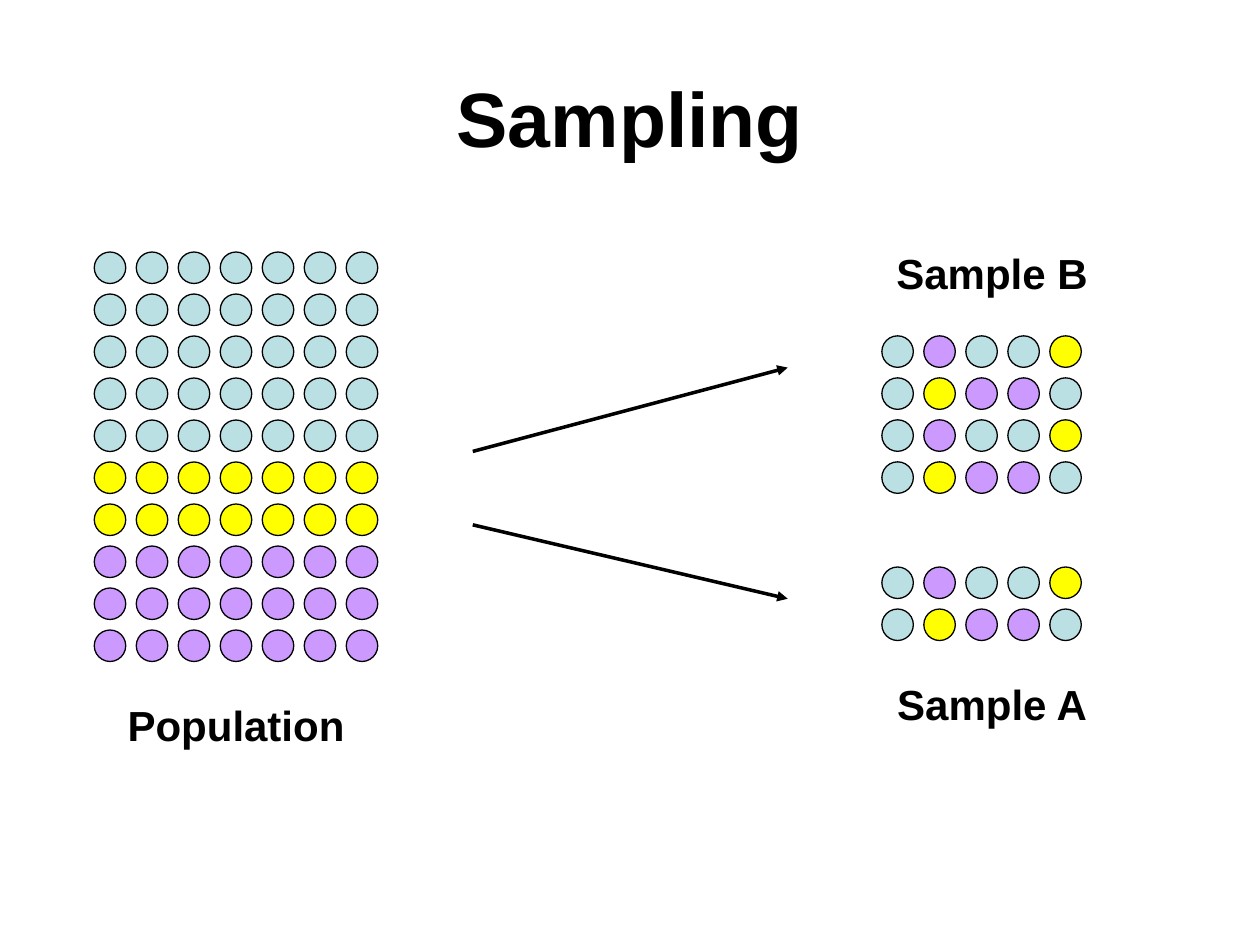
from lxml.etree import SubElement
from pptx import Presentation
from pptx.dml.color import RGBColor
from pptx.enum.shapes import MSO_CONNECTOR, MSO_SHAPE
from pptx.enum.text import MSO_ANCHOR, MSO_AUTO_SIZE, PP_ALIGN
from pptx.oxml.ns import qn
from pptx.util import Cm, Pt

COLORS = {"black": "000000", "blue": "BBE0E3", "yellow": "FFFF00", "purple": "CC99FF"}
DOT_COLORS = {"b": "blue", "y": "yellow", "p": "purple"}

DOT_SIZE = Cm(2.54) // 4
DOT_PITCH = Cm(2.54) // 3
LABEL_WIDTH, LABEL_HEIGHT = Cm(6.14), Cm(1.27)

POPULATION_ROWS = ["b" * 7] * 5 + ["y" * 7] * 2 + ["p" * 7] * 3
SAMPLE_ROWS = ["bpbby", "byppb"]


def color(name):
    return RGBColor.from_string(COLORS[name])


def write_text(shape, text, size=24, bold=True, font="Arial", ink="black",
               align=PP_ALIGN.CENTER, anchor=MSO_ANCHOR.TOP):
    frame = shape.text_frame
    frame.word_wrap = True
    frame.vertical_anchor = anchor
    paragraph = frame.paragraphs[0]
    paragraph.alignment = align
    run = paragraph.add_run()
    run.text = text
    run.font.size = Pt(size)
    run.font.bold = bold
    run.font.name = font
    run.font.color.rgb = color(ink)


def add_title(slide, text, left, top, width, height):
    title = slide.shapes.title
    title.left, title.top, title.width, title.height = left, top, width, height
    write_text(title, text, size=44, anchor=MSO_ANCHOR.MIDDLE)


def add_dot(slide, left, top, fill):
    dot = slide.shapes.add_shape(MSO_SHAPE.OVAL, left, top, DOT_SIZE, DOT_SIZE)
    dot.shadow.inherit = False
    dot.fill.solid()
    dot.fill.fore_color.rgb = color(fill)
    dot.line.color.rgb = color("black")
    dot.line.width = Pt(0.75)


def add_group(slide, label, rows, left, top, dots_left, dots_top=0, label_top=0):
    """Place a dot grid and its label at offsets from the group's corner."""
    for row, letters in enumerate(rows):
        for column, letter in enumerate(letters):
            add_dot(slide, left + dots_left + column * DOT_PITCH,
                    top + dots_top + row * DOT_PITCH, DOT_COLORS[letter])
    box = slide.shapes.add_textbox(left, top + label_top, LABEL_WIDTH, LABEL_HEIGHT)
    write_text(box, label)
    box.text_frame.auto_size = MSO_AUTO_SIZE.SHAPE_TO_FIT_TEXT


def add_arrow(slide, start_x, start_y, end_x, end_y):
    arrow = slide.shapes.add_connector(MSO_CONNECTOR.STRAIGHT, start_x, start_y, end_x, end_y)
    arrow.line.color.rgb = color("black")
    arrow.line.width = Pt(2)
    SubElement(arrow.line._get_or_add_ln(), qn("a:tailEnd"), type="triangle")
    SubElement(arrow._element.spPr, qn("a:effectLst"))


def build_sampling_slide(presentation):
    slide = presentation.slides.add_slide(presentation.slide_layouts[5])
    add_title(slide, "Sampling", Cm(1.27), Cm(0.76), Cm(22.86), Cm(3.18))
    add_group(slide, "Population", POPULATION_ROWS, Cm(1.69), Cm(5.08),
              dots_left=Cm(0.21), label_top=Cm(8.89))
    add_group(slide, "Sample A", SAMPLE_ROWS, Cm(16.93), Cm(11.43),
              dots_left=DOT_PITCH, label_top=Cm(2.12))
    add_group(slide, "Sample B", SAMPLE_ROWS * 2, Cm(16.93), Cm(4.87),
              dots_left=DOT_PITCH, dots_top=Cm(1.9))
    for start_y, end_y in ((9.1, 7.41), (10.58, 12.07)):
        add_arrow(slide, Cm(9.53), Cm(start_y), Cm(15.88), Cm(end_y))


def main():
    presentation = Presentation()
    presentation.slide_width, presentation.slide_height = Cm(25.4), Cm(19.05)
    build_sampling_slide(presentation)
    presentation.save("out.pptx")


if __name__ == "__main__":
    main()
